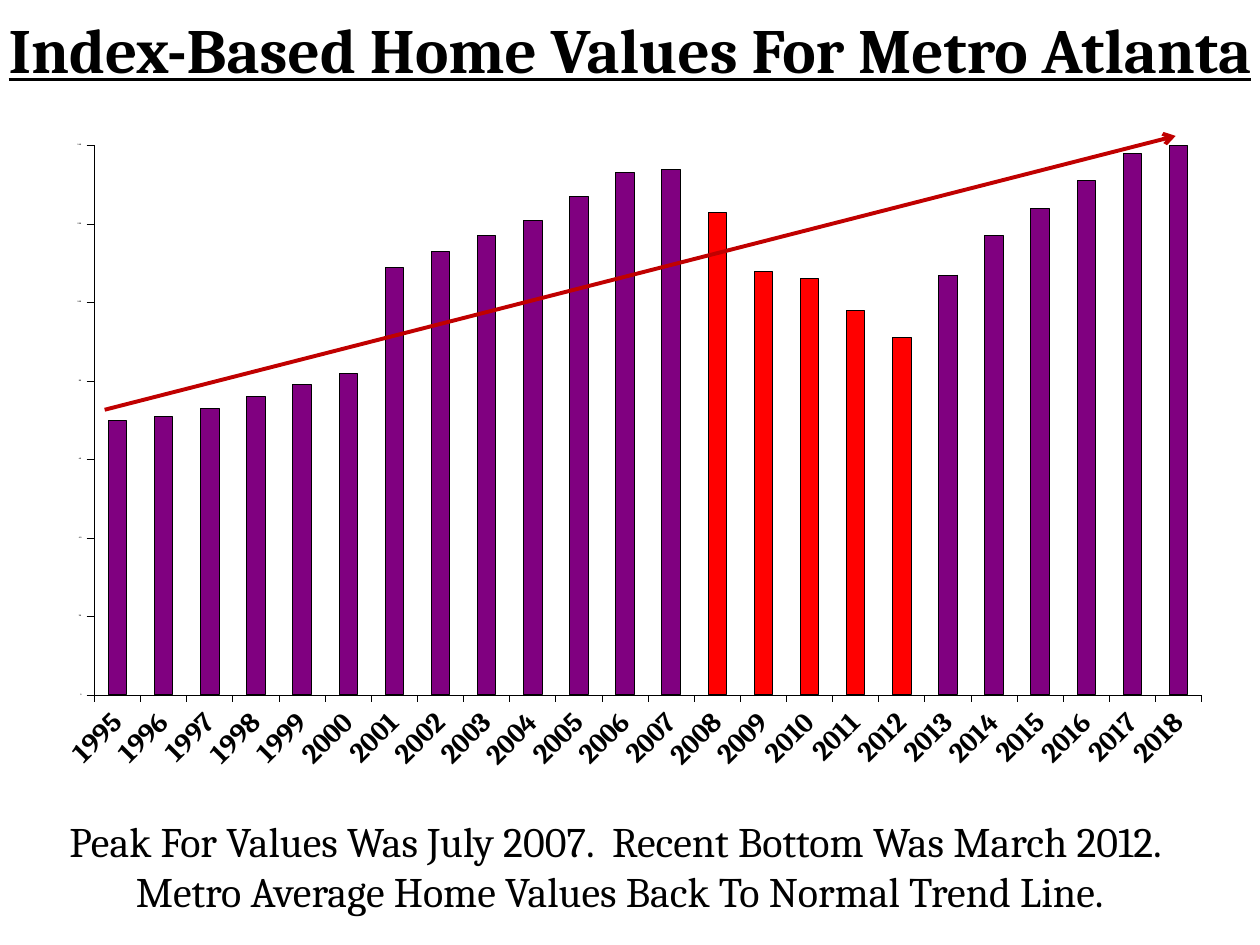
import lxml.etree
import pptx
import pptx.chart.data
import pptx.dml.color
import pptx.enum.chart
import pptx.enum.shapes
import pptx.enum.text
import pptx.oxml
import pptx.oxml.ns
import pptx.util

Cm = pptx.util.Cm
Pt = pptx.util.Pt
qn = pptx.oxml.ns.qn

HEADLINE = "Index-Based Home Values For Metro Atlanta"
SUMMARY = (
    "Peak For Values Was July 2007.  Recent Bottom Was March 2012.  "
    "Metro Average Home Values Back To Normal Trend Line."
)
FIRST_YEAR = 1995
HOME_VALUES = [
    70, 71, 73, 76, 79, 82, 109, 113, 117, 121, 127, 133,
    134, 123, 108, 106, 98, 91, 107, 117, 124, 131, 138, 141,
]
DECLINE_YEARS = range(2008, 2013)

THEME = {
    "font": "Cambria",
    "ink": "000000",
    "growth": "800080",
    "decline": "FF0000",
    "trend": "C00000",
    "headline": 36,
    "summary": 24,
    "years": 16,
    "scale": 1.2,
}
PLACES = {
    "headline": (0, 0.43, 25.4, 1.07),
    "values": (0.76, 1.5, 23.67, 15.01),
    "summary": (0.64, 16.31, 23.7, 2.31),
    "trend": (2.11, 8.26, 23.7, 2.74),
}
PLOT_AREA = {"x": 0.048, "y": 0.095, "w": 0.943, "h": 0.738}


def colour(role):
    return pptx.dml.color.RGBColor.from_string(THEME[role])


def place(part):
    return [Cm(length) for length in PLACES[part]]


def apply(target, formats):
    for attribute, value in formats.items():
        setattr(target, attribute, value)


def style_font(font, size_role, **extra):
    apply(font, {"name": THEME["font"], "size": Pt(THEME[size_role]), **extra})
    font.color.rgb = colour("ink")


def style_line(line, role, width):
    line.color.rgb = colour(role)
    line.width = Pt(width)


def add_words(slide, part, words, anchor, **extra):
    frame = slide.shapes.add_textbox(*place(part)).text_frame
    apply(frame, {"word_wrap": True, "vertical_anchor": anchor,
                  "margin_left": 0, "margin_right": 0})
    line = frame.paragraphs[0]
    line.alignment = pptx.enum.text.PP_ALIGN.CENTER
    run = line.add_run()
    run.text = words
    style_font(run.font, part, **extra)


def set_plot_area(chart):
    plot_area = chart._chartSpace.chart.plotArea
    for old in plot_area.findall(qn("c:layout")):
        plot_area.remove(old)
    layout = pptx.oxml.parse_xml(
        f"<c:layout {pptx.oxml.ns.nsdecls('c')}><c:manualLayout/></c:layout>")
    settings = {"layoutTarget": "inner", "xMode": "edge", "yMode": "edge", **PLOT_AREA}
    for tag, value in settings.items():
        lxml.etree.SubElement(layout[0], qn(f"c:{tag}")).set("val", str(value))
    plot_area.insert(0, layout)


def add_home_values(slide):
    years = range(FIRST_YEAR, FIRST_YEAR + len(HOME_VALUES))
    history = pptx.chart.data.CategoryChartData(number_format="0")
    history.categories = [str(year) for year in years]
    history.add_series("Series 1", HOME_VALUES)
    chart = slide.shapes.add_chart(
        pptx.enum.chart.XL_CHART_TYPE.COLUMN_CLUSTERED, *place("values"), history).chart
    apply(chart, {"has_legend": False, "has_title": False})
    style_font(chart.font, "scale", bold=True)
    set_plot_area(chart)

    ticks = {"major_tick_mark": pptx.enum.chart.XL_TICK_MARK.OUTSIDE,
             "minor_tick_mark": pptx.enum.chart.XL_TICK_MARK.NONE,
             "has_major_gridlines": False}
    axes = (
        (chart.category_axis, "years",
         {"tick_label_position": pptx.enum.chart.XL_TICK_LABEL_POSITION.LOW}),
        (chart.value_axis, "scale",
         {"minimum_scale": 0, "maximum_scale": 140, "major_unit": 20}),
    )
    for axis, size_role, formats in axes:
        apply(axis, {**ticks, **formats})
        style_font(axis.tick_labels.font, size_role, bold=True)
        style_line(axis.format.line, "ink", 0.02)
    year_text = chart.category_axis._element.find(qn("c:txPr")).find(qn("a:bodyPr"))
    year_text.set("rot", str(-45 * 60000))
    year_text.set("vert", "horz")

    apply(chart.plots[0], {"gap_width": 150, "vary_by_categories": False})
    series = chart.plots[0].series[0]
    series.invert_if_negative = False
    bars = [(series, "growth")]
    bars += [(series.points[year - FIRST_YEAR], "decline") for year in DECLINE_YEARS]
    for bar, role in bars:
        bar.format.fill.solid()
        bar.format.fill.fore_color.rgb = colour(role)
        style_line(bar.format.line, "ink", 0.06)


def add_trend(slide):
    trend = slide.shapes.add_connector(
        pptx.enum.shapes.MSO_CONNECTOR.STRAIGHT, *place("trend"))
    style_line(trend.line, "trend", 2.25)
    properties = trend._element.spPr
    lxml.etree.SubElement(properties.find(qn("a:ln")), qn("a:tailEnd")).set("type", "arrow")
    lxml.etree.SubElement(properties, qn("a:effectLst"))


def main():
    deck = pptx.Presentation()
    apply(deck, {"slide_width": Cm(25.4), "slide_height": Cm(19.05)})
    slide = deck.slides.add_slide(deck.slide_layouts[6])
    anchors = pptx.enum.text.MSO_ANCHOR
    add_home_values(slide)
    add_words(slide, "headline", HEADLINE, anchors.MIDDLE, bold=True, underline=True)
    add_words(slide, "summary", SUMMARY, anchors.TOP)
    add_trend(slide)
    deck.save("out.pptx")


if __name__ == "__main__":
    main()
